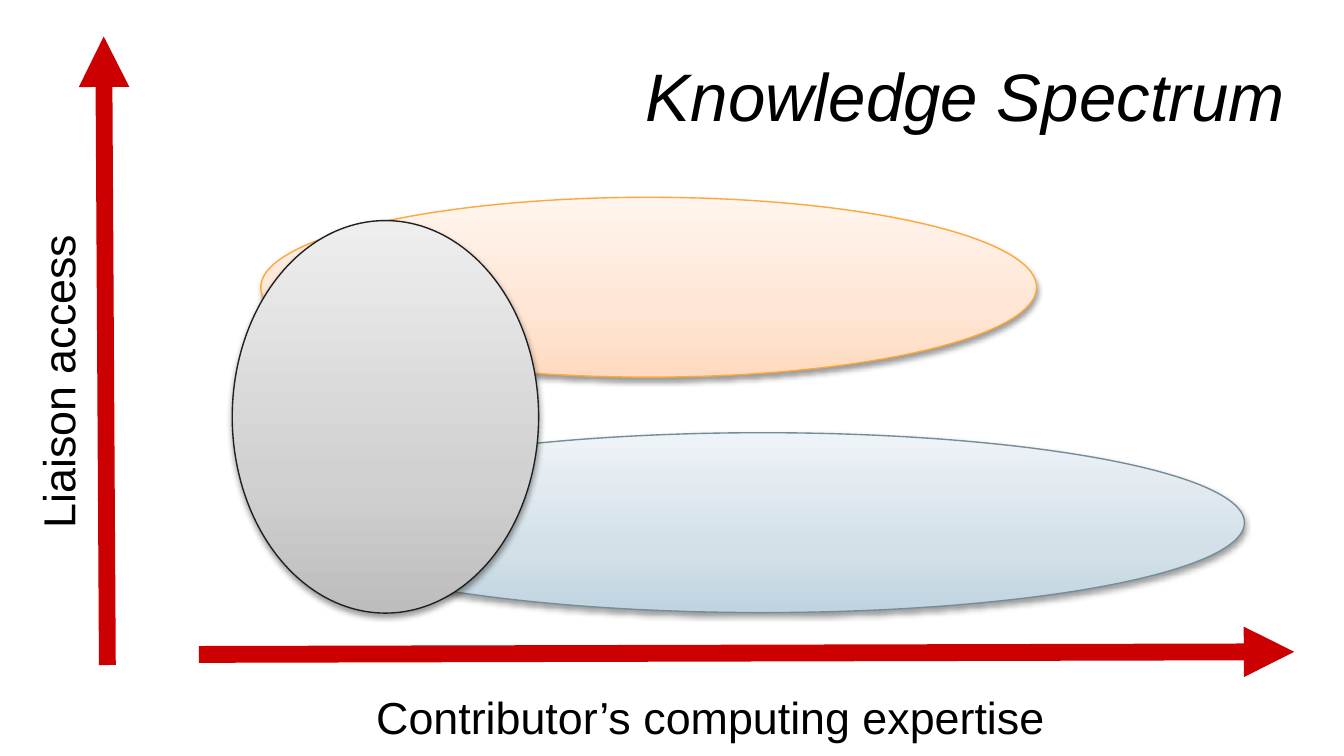
"""Build the Knowledge Spectrum slide: two axes and three overlapping ellipses."""
from lxml import etree
from pptx import Presentation
from pptx import util as u
from pptx.dml.color import RGBColor
from pptx.enum import shapes, text
from pptx.oxml import ns

BLACK = RGBColor(0, 0, 0)
RED = RGBColor(0xCC, 0x00, 0x00)
ORANGE_EDGE = RGBColor(0xFE, 0xA8, 0x3A)
ORANGES = [RGBColor(0xFF, 0xDA, 0xC0), RGBColor(0xFF, 0xE5, 0xD3), RGBColor(0xFF, 0xF5, 0xEE)]
BLUE_EDGE = RGBColor(0x74, 0x8D, 0x99)
BLUES = [RGBColor(0xC0, 0xD4, 0xE0), RGBColor(0xD3, 0xE0, 0xE8), RGBColor(0xEE, 0xF3, 0xF7)]
GRAY_EDGE = RGBColor(0x20, 0x20, 0x20)
GRAYS = [RGBColor(0xBD, 0xBD, 0xBD), RGBColor(0xD1, 0xD1, 0xD1), RGBColor(0xEE, 0xEE, 0xEE)]
STOPS = [0, 35, 100]


def add(parent, tag, **attributes):
    values = {name: str(value) for name, value in attributes.items()}
    return etree.SubElement(parent, ns.qn(tag), values)


deck = Presentation()
deck.slide_width, deck.slide_height = u.Cm(25.4), u.Cm(14.29)
slide = deck.slides.add_slide(deck.slide_layouts[6])

for ends in [(2.03, 12.57, 1.96, 0.69), (3.76, 12.37, 24.46, 12.32)]:
    axis = slide.shapes.add_connector(shapes.MSO_CONNECTOR.STRAIGHT, *map(u.Cm, ends))
    axis.line.color.rgb = RED
    axis.line.width = u.Pt(9)
    add(axis.line._get_or_add_ln(), "a:tailEnd", type="triangle")
    add(axis._element.spPr, "a:effectLst")

left, center, right = text.PP_ALIGN.LEFT, text.PP_ALIGN.CENTER, text.PP_ALIGN.RIGHT
labels = [
    ("Contributor’s computing expertise", (6.86, 12.73, 13.41, 1.17), 0, left, 24, False, 0.3),
    ("Liaison access", (-2.26, 6.63, 6.25, 1.17), 270, center, 24, False, 0.3),
    ("Knowledge Spectrum", (0.86, 0.64, 23.67, 1.6), 0, right, 36, True, 0.38),
]
for wording, place, turn, alignment, size, italic, inset in labels:
    label = slide.shapes.add_textbox(*map(u.Cm, place))
    label.rotation = turn
    frame = label.text_frame
    frame.word_wrap = True
    frame.vertical_anchor = text.MSO_ANCHOR.TOP
    frame.margin_left = frame.margin_right = frame.margin_bottom = u.Cm(0.25)
    frame.margin_top = u.Cm(inset)
    line = frame.paragraphs[0]
    line.alignment = alignment
    words = line.add_run()
    words.text = wording
    words.font.name = "Arial"
    words.font.size = u.Pt(size)
    words.font.italic = italic
    words.font.color.rgb = BLACK

groups = [
    ((4.93, 3.73, 14.66, 3.4), ORANGES, ORANGE_EDGE),
    ((5.31, 8.18, 18.21, 3.4), BLUES, BLUE_EDGE),
    ((4.39, 4.17, 5.79, 7.42), GRAYS, GRAY_EDGE),
]
for place, shades, edge in groups:
    group = slide.shapes.add_shape(shapes.MSO_SHAPE.OVAL, *map(u.Cm, place))
    group.line.color.rgb = edge
    group.line.width = u.Pt(0.75)
    group.fill.gradient()
    group.fill.gradient_angle = 90
    gradient = group._element.spPr.find(ns.qn("a:gradFill")).find(ns.qn("a:gsLst"))
    for old_stop in list(gradient):
        gradient.remove(old_stop)
    for position, shade in zip(STOPS, shades):
        stop = add(gradient, "a:gs", pos=position * 1000)
        add(stop, "a:srgbClr", val=shade)
    group.shadow.inherit = False
    effects = group._element.spPr.find(ns.qn("a:effectLst"))
    shadow = add(effects, "a:outerShdw", blurRad=u.Pt(3.1), dist=u.Pt(1.6),
                 dir=5400000, rotWithShape=0)
    add(add(shadow, "a:srgbClr", val=BLACK), "a:alpha", val=38000)

deck.save("out.pptx")
